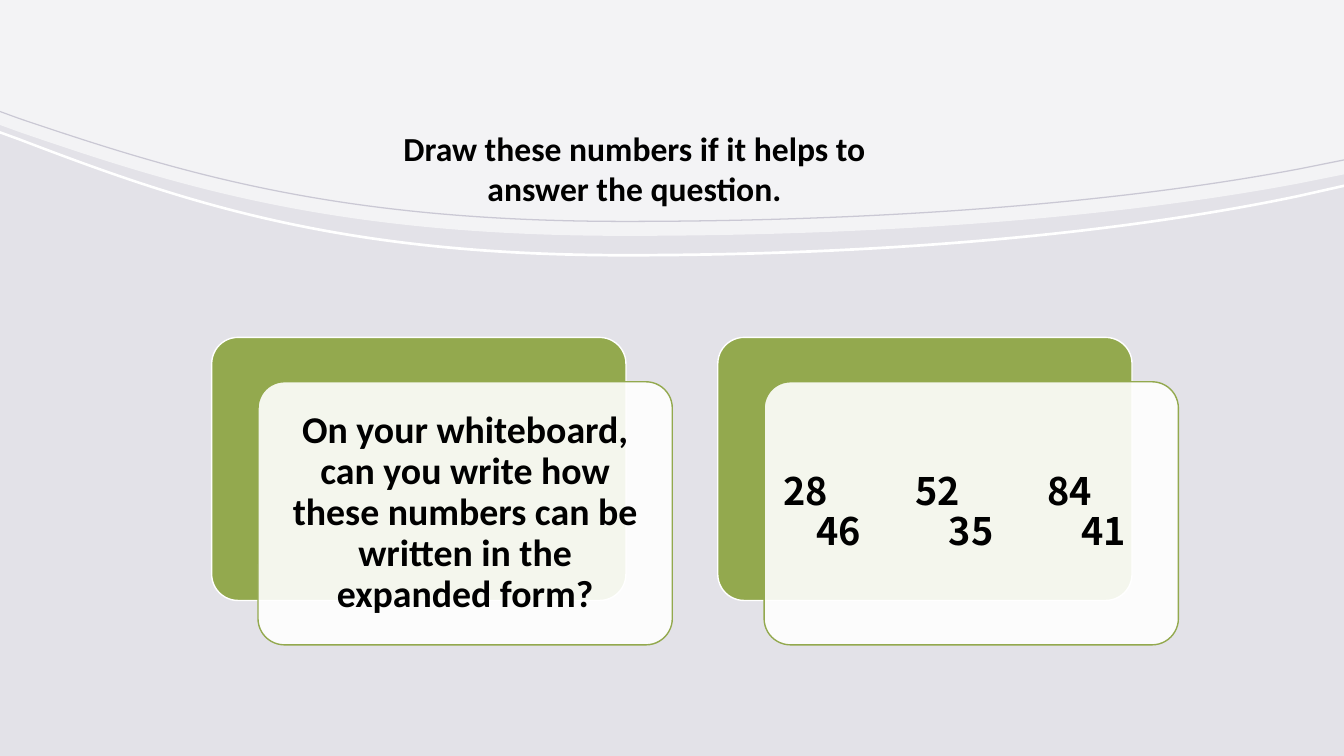
from dataclasses import dataclass

from lxml import etree
from pptx import Presentation
from pptx.dml.color import RGBColor
from pptx.enum import shapes, text
from pptx.oxml import ns
from pptx.util import Pt


@dataclass(frozen=True)
class Theme:
    backdrop: str = "E3E2E8"
    white: str = "FFFFFF"
    hairline: str = "CAC8D4"
    green: str = "93A94E"
    ink: str = "000000"
    body_font: str = "Calibri"
    number_font: str = "Noto Sans CJK JP"
    prompt_size: int = 24
    card_size: int = 27


THEME = Theme()
WIDTH, HEIGHT = 960, 540

# Swoop: every edge shares these x positions (two Bézier arcs between straight ends)
SWOOP_X = [0, 13.7, 128.9, 239.8, 446.4, 630, 798.5, 928, WIDTH]
PANEL_Y = [89.3, 94.3, 133.9, 168.5, 168.5, 168.5, 155.5, 131, 124.6]
HAIRLINE_Y = [79.2, 84.2, 123.1, 157.7, 157.7, 157.7, 144.7, 120.2, 113.8]
WHITE_LINE_Y = [93.6, 98.6, 142.6, 181.4, 181.4, 181.4, 166.3, 139, 131.8]
FORWARD_ARCS = [1, 4]
RETURN_ARCS = [10, 13]

# Cards
CARD_LEFT, CARD_TOP, CARD_PITCH = 151.2, 241, 361.5
CARD_WIDTH, CARD_HEIGHT = 295.9, 187.9
FRONT_SHIFT_X, FRONT_SHIFT_Y = 33.1, 31.7
NUMBER_TAB = 94.5


def fill_with(shape, color, opacity=100):
    shape.shadow.inherit = False
    shape.fill.solid()
    shape.fill.fore_color.rgb = RGBColor.from_string(color)
    if opacity < 100:
        srgb = shape.fill._xPr.find(".//" + ns.qn("a:srgbClr"))
        etree.SubElement(srgb, ns.qn("a:alpha"), val=str(opacity * 1000))


def write(frame, words, font, size):
    frame.word_wrap = True
    paragraph = frame.paragraphs[0]
    paragraph.text = words
    paragraph.alignment = text.PP_ALIGN.CENTER
    paragraph.font.name = font
    paragraph.font.size = Pt(size)
    paragraph.font.bold = True
    paragraph.font.color.rgb = RGBColor.from_string(THEME.ink)
    return paragraph


def bend(shape, arc_starts):
    """Turn each run of three straight segments into one Bézier arc."""
    segments = shape._element.findall(".//" + ns.qn("a:lnTo"))
    for start in arc_starts:
        arc, *rest = segments[start:start + 3]
        curve = etree.Element(ns.qn("a:cubicBezTo"))
        arc.addprevious(curve)
        for segment in (arc, *rest):
            curve.append(segment[0])
            segment.getparent().remove(segment)


def add_swoop(slide, edge, way_back, arc_starts, color, opacity=100):
    outline = [(Pt(x), Pt(y)) for x, y in edge + way_back]
    builder = slide.shapes.build_freeform(*outline[0])
    builder.add_line_segments(outline[1:], close=True)
    swoop = builder.convert_to_shape()
    bend(swoop, arc_starts)
    fill_with(swoop, color, opacity)
    swoop.line.fill.background()


def add_swoop_line(slide, heights, thickness, color):
    edge = list(zip(SWOOP_X, heights))
    way_back = [(x, y + thickness) for x, y in reversed(edge)]
    add_swoop(slide, edge, way_back, FORWARD_ARCS + RETURN_ARCS, color)


def add_panel(slide, left, top, color, outline, opacity=100):
    panel = slide.shapes.add_shape(
        shapes.MSO_SHAPE.ROUNDED_RECTANGLE,
        Pt(left), Pt(top), Pt(CARD_WIDTH), Pt(CARD_HEIGHT))
    panel.adjustments[0] = 0.1
    fill_with(panel, color, opacity)
    panel.line.color.rgb = RGBColor.from_string(outline)
    panel.line.width = Pt(1)
    return panel


def add_card(slide, left, words, font):
    add_panel(slide, left, CARD_TOP, THEME.green, THEME.white)
    front = add_panel(slide, left + FRONT_SHIFT_X, CARD_TOP + FRONT_SHIFT_Y,
                      THEME.white, THEME.green, opacity=90)
    frame = front.text_frame
    frame.vertical_anchor = text.MSO_ANCHOR.MIDDLE
    frame.margin_left = frame.margin_right = Pt(8)
    frame.margin_top = frame.margin_bottom = Pt(8)
    paragraph = write(frame, words, font, THEME.card_size)
    paragraph.line_spacing = 0.9
    paragraph._p.get_or_add_pPr().set("defTabSz", str(Pt(NUMBER_TAB)))


def add_prompt(slide, words):
    prompt = slide.shapes.add_textbox(Pt(275), Pt(87.8), Pt(356.4), Pt(65.5))
    write(prompt.text_frame, words, THEME.body_font, THEME.prompt_size)
    prompt.text_frame.auto_size = text.MSO_AUTO_SIZE.SHAPE_TO_FIT_TEXT


def main():
    deck = Presentation()
    deck.slide_width, deck.slide_height = Pt(WIDTH), Pt(HEIGHT)
    slide = deck.slides.add_slide(deck.slide_layouts[6])
    slide.background.fill.solid()
    slide.background.fill.fore_color.rgb = RGBColor.from_string(THEME.backdrop)

    # Curved header
    add_swoop(slide, list(zip(SWOOP_X, PANEL_Y)), [(WIDTH, 0), (0, 0)],
              FORWARD_ARCS, THEME.white, opacity=60)
    add_swoop_line(slide, WHITE_LINE_Y, 1.9, THEME.white)
    add_swoop_line(slide, HAIRLINE_Y, 0.9, THEME.hairline)

    # Task and its numbers
    cards = [
        ("On your whiteboard, can you write how these numbers can be written "
         "in the expanded form?", THEME.body_font),
        ("28\t52\t84\t46\t35\t41", THEME.number_font),
    ]
    for index, (words, font) in enumerate(cards):
        add_card(slide, CARD_LEFT + index * CARD_PITCH, words, font)

    # Prompt above the cards
    add_prompt(slide, "Draw these numbers if it helps to answer the question.")

    deck.save("out.pptx")


if __name__ == "__main__":
    main()
